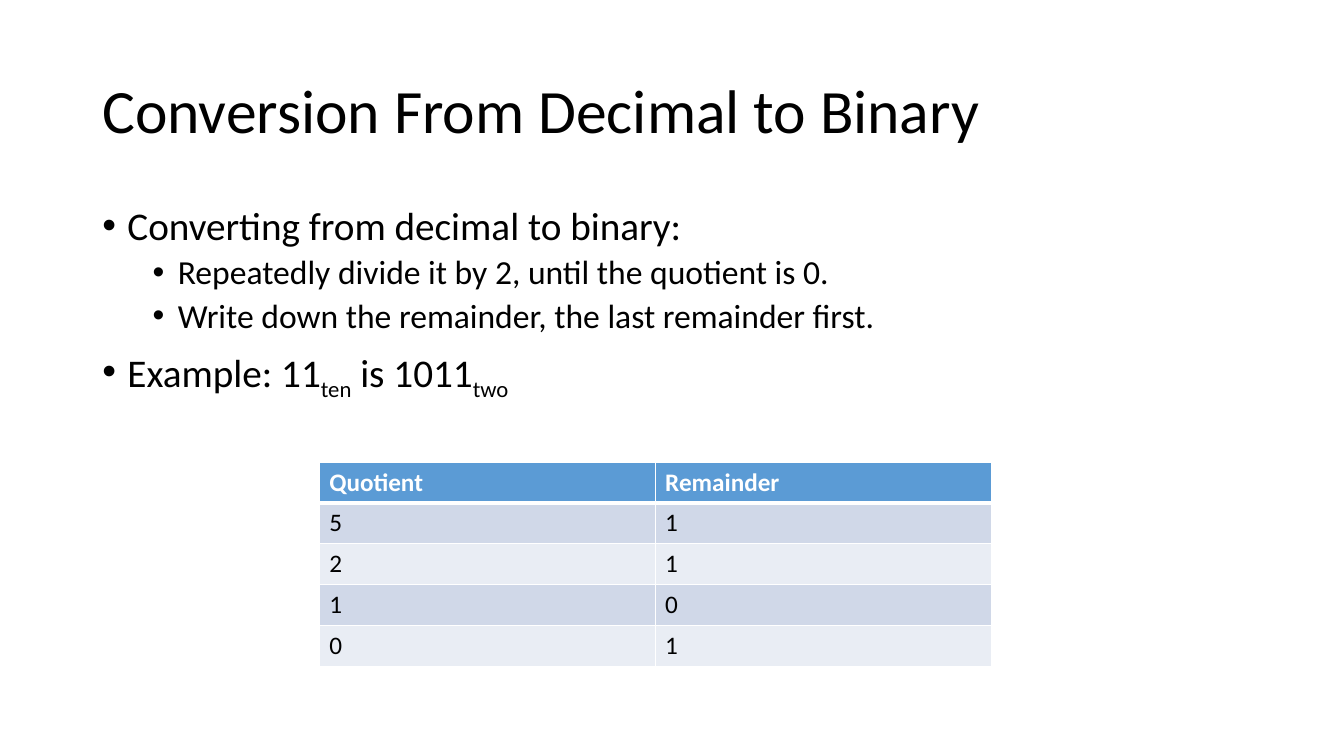
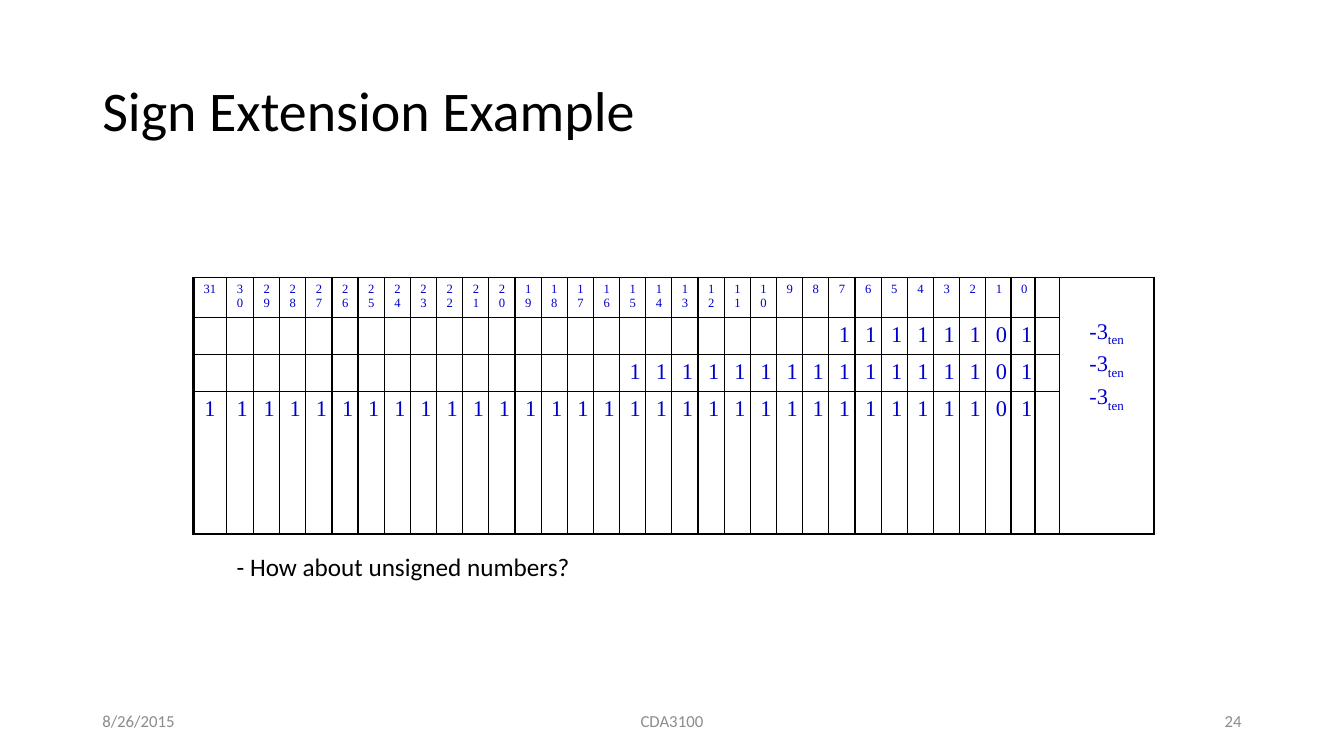
from lxml import etree
from pptx import Presentation
from pptx.dml.color import RGBColor
from pptx.enum import text
from pptx.oxml import ns
from pptx.util import Pt

# Shared look
SANS, SERIF = "Calibri", "Times New Roman"
BLACK = RGBColor(0, 0, 0)
WHITE = RGBColor(0xFF, 0xFF, 0xFF)
GRAY = RGBColor(0x8C, 0x8C, 0x8C)
HEADER_BLUE = RGBColor(0x5B, 0x9B, 0xD5)
BANDS = RGBColor(0xD0, 0xD8, 0xE8), RGBColor(0xE9, 0xED, 0xF4)
BIT_BLUE = RGBColor(0, 0, 0xCC)
LEFT, CENTER, RIGHT = text.PP_ALIGN.LEFT, text.PP_ALIGN.CENTER, text.PP_ALIGN.RIGHT
TOP, MIDDLE = text.MSO_ANCHOR.TOP, text.MSO_ANCHOR.MIDDLE

MARGIN, CONTENT_W = 66, 828
TITLE_BOX = MARGIN, 28.8, CONTENT_W, 104.4
BODY_BOX = MARGIN, 144, CONTENT_W, 342.7
FOOTER_Y, FOOTER_H = 500.4, 28.8


def write(p, content, size, color=BLACK, font=SANS, bold=False, align=LEFT):
    """Fill a paragraph; parts between underscores become subscripts."""
    p.alignment = align
    for i, part in enumerate(content.split("_")):
        if not part:
            continue
        r = p.add_run()
        r.text = part
        r.font.size, r.font.name, r.font.bold = Pt(size), font, bold
        r.font.color.rgb = color
        if i % 2:
            r.font._element.set("baseline", "-25000")


def text_frame(s, box, anchor=TOP):
    tf = s.shapes.add_textbox(*map(Pt, box)).text_frame
    tf.word_wrap = True
    tf.vertical_anchor = anchor
    return tf


def add_title(s, box, content, size):
    p = text_frame(s, box, MIDDLE).paragraphs[0]
    p.line_spacing = 0.9
    write(p, content, size)


def add_bullets(s, box, items):
    tf = text_frame(s, box)
    for i, (level, content) in enumerate(items):
        p = tf.add_paragraph() if i else tf.paragraphs[0]
        p.level = level
        p.line_spacing = 0.9
        p.space_before = Pt(5 if level else 10)
        pPr = p._p.get_or_add_pPr()
        pPr.set("marL", str(Pt(18 + 36 * level)))
        pPr.set("indent", str(-Pt(18)))
        etree.SubElement(pPr, ns.qn("a:buFont")).set("typeface", "Arial")
        etree.SubElement(pPr, ns.qn("a:buChar")).set("char", "•")
        write(p, content, 24 if level else 28)


def add_footer(s, y, h, date, course, number):
    for x, w, content, align in ((MARGIN, 216, date, LEFT),
                                 (318, 324, course, CENTER),
                                 (678, 216, number, RIGHT)):
        tf = text_frame(s, (x, y, w, h), MIDDLE)
        write(tf.paragraphs[0], content, 12, GRAY, align=align)


# Tables
def add_grid(s, x, y, widths, heights):
    shape = s.shapes.add_table(len(heights), len(widths), Pt(x), Pt(y),
                               Pt(sum(widths)), Pt(sum(heights)))
    table = shape.table
    table.first_row = table.horz_banding = False
    for column, w in zip(table.columns, widths):
        column.width = Pt(w)
    for row, h in zip(table.rows, heights):
        row.height = Pt(h)
    return table


def set_borders(cell, color, left=1, right=1, top=1, bottom=1):
    tcPr = cell._tc.get_or_add_tcPr()
    for side, width in zip("LRTB", (left, right, top, bottom)):
        ln = etree.SubElement(tcPr, ns.qn("a:ln" + side))
        ln.set("w", str(Pt(width)))
        fill = etree.SubElement(ln, ns.qn("a:solidFill"))
        etree.SubElement(fill, ns.qn("a:srgbClr")).set("val", str(color))


def add_division_table(s, box, rows):
    x, y, w, h = box
    columns = len(rows[0])
    table = add_grid(s, x, y, [w / columns] * columns, [h / len(rows)] * len(rows))
    for i, row in enumerate(rows):
        for j, value in enumerate(row):
            cell = table.cell(i, j)
            set_borders(cell, WHITE, top=3 if i == 1 else 1, bottom=1 if i else 3)
            cell.fill.solid()
            cell.fill.fore_color.rgb = BANDS[(i - 1) % 2] if i else HEADER_BLUE
            write(cell.text_frame.paragraphs[0], str(value), 18,
                  BLACK if i else WHITE, bold=i == 0)


def add_bit_table(s, x, y, value, sizes, bits=32):
    """Bit numbers on top, then the value in two's complement at each size."""
    widths = [23.8, 19.3] + [18.7] * (bits - 4) + [18, 16.8, 16.8, 67.7]
    heights = [28] + [26.5] * (len(sizes) - 1) + [100]
    table = add_grid(s, x, y, widths, heights)
    rows = [[str(n) for n in reversed(range(bits))]]
    rows += [list(format(value % 2 ** n, "b").rjust(bits)) for n in sizes]
    last_row, last_col = len(rows) - 1, len(widths) - 1

    for i, row in enumerate(rows):
        for j in range(len(widths)):
            cell = table.cell(i, j)
            set_borders(cell, BLACK, left=1 if j else 2.25,
                        right=2.25 if j == last_col else 1,
                        bottom=2.25 if i == last_row or j == last_col else 1)
            cell.fill.background()
            digits = row[j].strip() if j < bits else ""
            if digits:
                write(cell.text_frame.paragraphs[0], digits, 16 if i else 9,
                      BIT_BLUE, SERIF, align=CENTER)
            else:
                cell.margin_top = cell.margin_bottom = 0

    # Decimal values beside the bits
    label = table.cell(0, last_col)
    label.merge(table.cell(last_row, last_col))
    label.margin_top = Pt(30)
    tf = label.text_frame
    for i in range(len(sizes)):
        p = tf.add_paragraph() if i else tf.paragraphs[0]
        p.space_before = Pt(3 if i else 0)
        write(p, f"{value}_ten_", 16, BIT_BLUE, SERIF, align=CENTER)


# Slides
def conversion_slide(s):
    add_title(s, TITLE_BOX, "Conversion From Decimal to Binary", 44)
    add_bullets(s, BODY_BOX, [
        (0, "Converting from decimal to binary:"),
        (1, "Repeatedly divide it by 2, until the quotient is 0."),
        (1, "Write down the remainder, the last remainder first."),
        (0, "Example: 11_ten_ is 1011_two_"),
    ])
    add_division_table(s, (228, 330, 480, 146), [
        ("Quotient", "Remainder"), (5, 1), (2, 1), (1, 0), (0, 1)])


def sign_extension_slide(s):
    add_footer(s, FOOTER_Y, FOOTER_H, "8/26/2015", "CDA3100", "24")
    add_title(s, TITLE_BOX, "Sign Extension Example", 40)
    add_bit_table(s, 138, 198, -3, (8, 16, 32))
    question = text_frame(s, (162, 390, 600, 29))
    write(question.paragraphs[0], "- How about unsigned numbers?", 18)


def main():
    prs = Presentation()
    prs.slide_width, prs.slide_height = Pt(960), Pt(540)
    for build in (conversion_slide, sign_extension_slide):
        build(prs.slides.add_slide(prs.slide_layouts[6]))
    prs.save("out.pptx")


if __name__ == "__main__":
    main()
